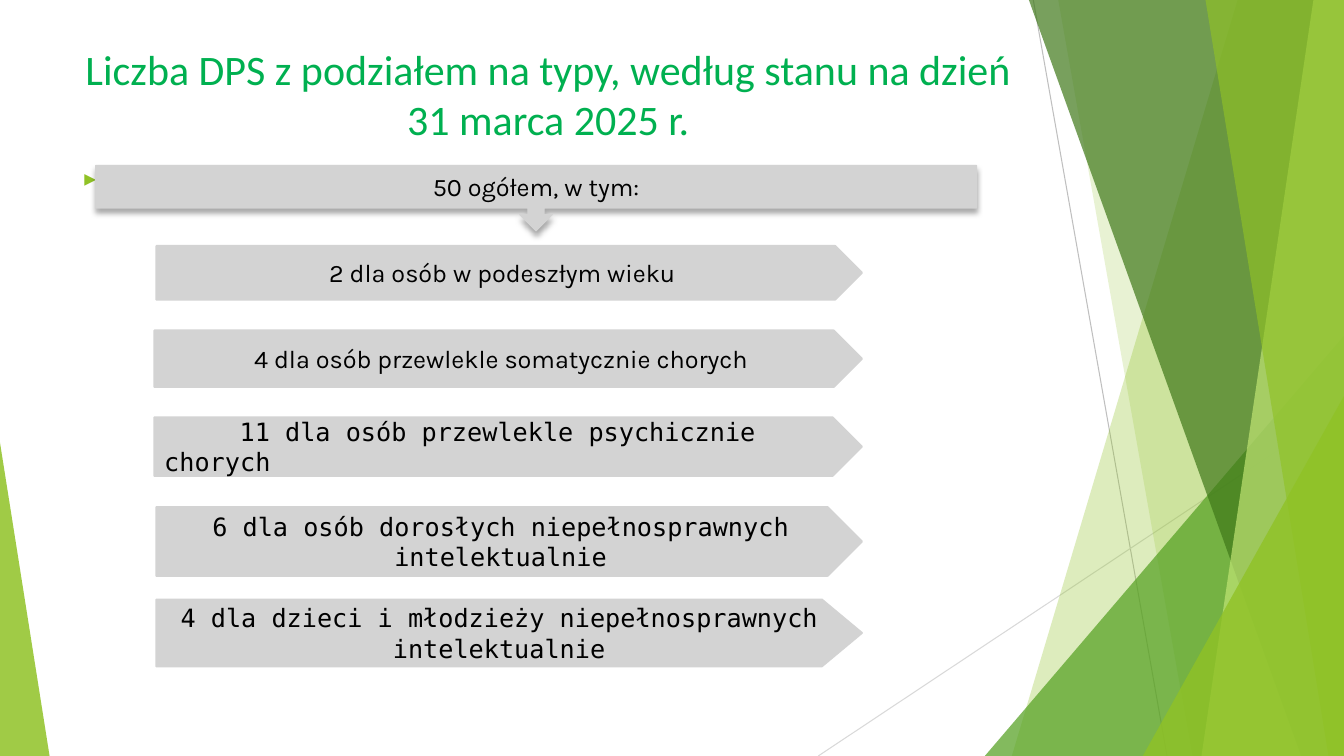
import pptx
import pptx.dml.color
import pptx.enum.shapes
import pptx.enum.text
import pptx.oxml
import pptx.oxml.ns
import pptx.util
import lxml.etree

Cm, Pt = pptx.util.Cm, pptx.util.Pt
RGB = pptx.dml.color.RGBColor
KIND = pptx.enum.shapes.MSO_SHAPE
ALIGN = pptx.enum.text.PP_ALIGN
ANCHOR = pptx.enum.text.MSO_ANCHOR
qn = pptx.oxml.ns.qn

LIME = RGB(0x90, 0xC2, 0x26)
PALE = RGB(0xC0, 0xE4, 0x74)
LEAF = RGB(0x54, 0xA0, 0x21)
DARK = RGB(0x3F, 0x78, 0x19)
GREEN = RGB(0x00, 0xB0, 0x50)
GREY = RGB(0xD3, 0xD3, 0xD3)
MID = RGB(0xBF, 0xBF, 0xBF)
LIGHT = RGB(0xD9, 0xD9, 0xD9)
BLACK = RGB(0, 0, 0)

WIDE, HIGH = 33.87, 19.05
MONO = "DejaVu Sans Mono"
SHADOW = (
    '<a:effectLst xmlns:a="http://schemas.openxmlformats.org/drawingml/2006/main">'
    '<a:outerShdw blurRad="50800" dist="38100" dir="5400000" rotWithShape="0">'
    '<a:srgbClr val="000000"><a:alpha val="35000"/></a:srgbClr>'
    '</a:outerShdw></a:effectLst>')


class Deck:
    """Holds the style and the current slide."""
    font = {"name": "Karla", "size": Pt(18)}
    para = {"alignment": ALIGN.CENTER}
    frame = {"word_wrap": True, "vertical_anchor": ANCHOR.MIDDLE}

    def __init__(self):
        self.prs = pptx.Presentation()
        self.prs.slide_width, self.prs.slide_height = Cm(WIDE), Cm(HIGH)
        self.slide = self.prs.slides.add_slide(self.prs.slide_layouts[6])
        self.shapes = self.slide.shapes

    def format(self, item, values):
        for key, value in values.items():
            setattr(item, key, value)

    def paint(self, shape, color, alpha=100, edge=0):
        shape.shadow.inherit = False
        shape.fill.solid()
        shape.fill.fore_color.rgb = color
        if alpha < 100:
            tint = shape._element.spPr.find(qn("a:solidFill"))[0]
            lxml.etree.SubElement(tint, qn("a:alpha")).set("val", str(alpha * 1000))
        if edge:
            shape.line.color.rgb = color
            shape.line.width = Pt(edge)
        else:
            shape.line.fill.background()

    def label(self, shape, text, color=BLACK, font={}, para={}, frame={}):
        self.format(shape.text_frame, {**self.frame, **frame})
        line = shape.text_frame.paragraphs[0]
        self.format(line, {**self.para, **para})
        run = line.add_run()
        run.text = text
        self.format(run.font, {**self.font, **font})
        run.font.color.rgb = color
        return line

    def line(self, x1, y1, x2, y2, color):
        rule = self.shapes.add_connector(
            pptx.enum.shapes.MSO_CONNECTOR.STRAIGHT, Cm(x1), Cm(y1), Cm(x2), Cm(y2))
        rule.line.color.rgb = color
        rule.line.width = Pt(0.75)
        lxml.etree.SubElement(rule._element.spPr, qn("a:effectLst"))

    def facet(self, top, foot, color, alpha):
        """Band from a slanted left edge to the right side of the slide."""
        form = self.shapes.build_freeform(Cm(top), 0)
        form.add_line_segments([(Cm(WIDE), 0), (Cm(WIDE), Cm(HIGH)), (Cm(foot), Cm(HIGH))])
        self.paint(form.convert_to_shape(), color, alpha)

    def shape(self, kind, x, y, w, h, color, alpha=100, edge=0, adj=None):
        item = self.shapes.add_shape(kind, Cm(x), Cm(y), Cm(w), Cm(h))
        if adj is not None:
            item.adjustments[0] = adj
        self.paint(item, color, alpha, edge)
        return item

    def wedge(self, x, w, h, color, alpha, adj):
        """Triangle that stands on the bottom of the slide."""
        self.shape(KIND.ISOSCELES_TRIANGLE, x, HIGH - h, w, h, color, alpha, adj=adj)

    def text(self, x, y, w, h, text, color, **style):
        box = self.shapes.add_textbox(Cm(x), Cm(y), Cm(w), Cm(h))
        self.label(box, text, color, frame={"vertical_anchor": ANCHOR.TOP}, **style)

    def arrow(self, x, y, h, text, adj=0.5, indent=0, **style):
        right = 21.72
        plate = self.shape(KIND.PENTAGON, x, y, right - x, h, GREY, edge=1.5, adj=adj)
        line = self.label(plate, text, **style)
        if indent:
            line._p.get_or_add_pPr().set("indent", str(Cm(indent)))

    def call(self, x, y, w, h, text):
        box = self.shape(KIND.DOWN_ARROW_CALLOUT, x, y, w, h, GREY, edge=0.75)
        props = box._element.spPr
        props.replace(props.find(qn("a:effectLst")), pptx.oxml.parse_xml(SHADOW))
        self.label(box, text)


def main():
    deck = Deck()

    # Green backdrop
    deck.line(26.04, 0, 29.41, HIGH, MID)
    deck.line(WIDE, 10.24, 20.62, HIGH, LIGHT)
    deck.facet(31.19, 25.5, LIME, 30)
    deck.facet(26.67, 30.05, LIME, 20)
    deck.wedge(24.82, 9.05, 10.59, LEAF, 72, 1)
    deck.facet(25.93, 32.79, DARK, 70)
    deck.facet(33.1, 30.28, PALE, 70)
    deck.facet(30.38, 33.48, LIME, 65)
    deck.wedge(28.8, 5.07, 9.07, LIME, 80, 1)
    deck.wedge(0, 1.25, 7.9, LIME, 85, 0)

    # Title and marker
    deck.text(1.88, 0.97, 23.88, 2.59,
              "Liczba DPS z podziałem na typy, według stanu na dzień 31 marca 2025 r.",
              GREEN, font={"name": "Calibri", "size": Pt(30)})
    deck.text(1.88, 4.06, 1.2, 0.8, "▶", LIME,
              font={"name": MONO, "size": Pt(14)}, para={"alignment": ALIGN.LEFT})

    # Total
    deck.call(2.41, 4.17, 22.2, 1.65, "50 ogółem, w tym:")

    # Types of homes
    mono = {"font": {"name": MONO}}
    left = {"para": {"alignment": ALIGN.LEFT}, "indent": 1.9}
    rows = [
        (3.94, 6.2, 1.35, "2 dla osób w podeszłym wieku", {}),
        (3.89, 8.33, 1.42, "4 dla osób przewlekle somatycznie chorych", {}),
        (3.89, 10.52, 1.47, "11 dla osób przewlekle psychicznie chorych", {**mono, **left}),
        (3.94, 12.78, 1.73, "6 dla osób dorosłych niepełnosprawnych intelektualnie", mono),
        (3.94, 15.11, 1.68, "4 dla dzieci i młodzieży niepełnosprawnych intelektualnie",
         {**mono, "adj": 0.6}),
    ]
    for x, y, h, text, style in rows:
        deck.arrow(x, y, h, text, **style)

    deck.prs.save("out.pptx")


if __name__ == "__main__":
    main()
